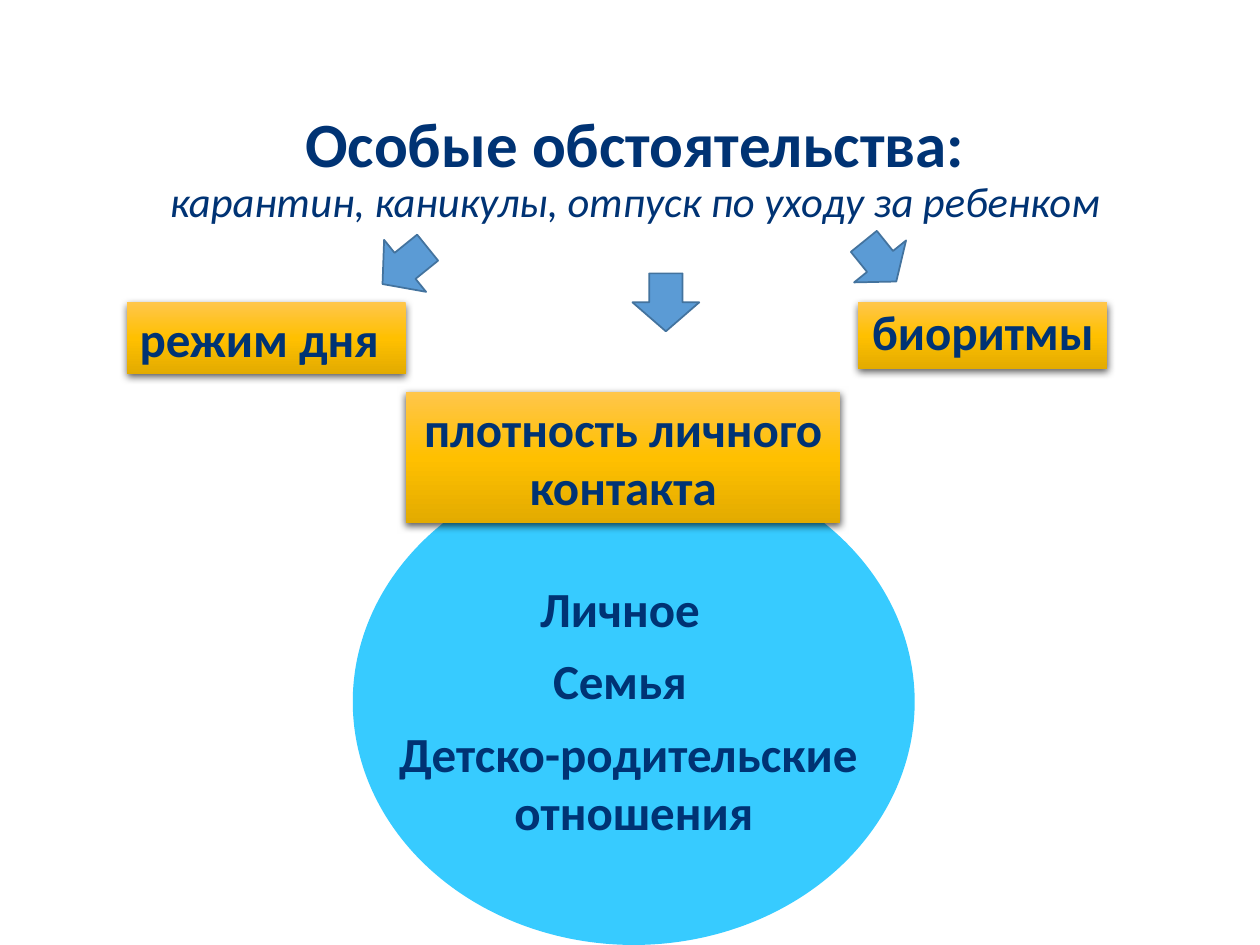
from dataclasses import dataclass
import copy

import lxml.etree
import pptx
import pptx.dml.color
import pptx.enum.shapes
import pptx.enum.text
import pptx.oxml.ns
import pptx.util

Inches = pptx.util.Inches
Pt = pptx.util.Pt
Shapes = pptx.enum.shapes.MSO_SHAPE
Align = pptx.enum.text.PP_ALIGN
Anchor = pptx.enum.text.MSO_ANCHOR
qn = pptx.oxml.ns.qn


@dataclass(frozen=True)
class Theme:
    font: str = "Calibri"
    ink: str = "003374"
    circle: str = "37CBFF"
    arrow: str = "5B9BD5"
    arrow_line: str = "43739E"
    gold: tuple = ((0, "FFC64B"), (0.5, "FFC000"), (1, "E3AB00"))
    shadow: str = "000000"
    title_size: float = 36
    subtitle_size: float = 24.3
    label_size: float = 28


@dataclass(frozen=True)
class Area:
    left: float
    top: float
    width: float
    height: float

    def lengths(self) -> tuple:
        return tuple(map(Inches, (self.left, self.top, self.width, self.height)))


@dataclass(frozen=True)
class Label:
    text: str
    area: Area
    align: Align = Align.CENTER
    spacing: float = 1.0


@dataclass(frozen=True)
class Arrow:
    area: Area
    rotation: float = 0


THEME = Theme()

FACTORS = (
    Label("плотность личного контакта", Area(3.22, 3.11, 3.45, 1.04)),
    Label("режим дня", Area(1.01, 2.4, 2.21, 0.57), Align.LEFT),
    Label("биоритмы", Area(6.81, 2.4, 1.98, 0.53), spacing=0.9),
)
CIRCLE_LABELS = (
    Label("Личное", Area(4.18, 4.54, 1.48, 0.57)),
    Label("Семья", Area(4.28, 5.11, 1.28, 0.57)),
    Label("Детско-родительские \nотношения", Area(3.05, 5.69, 3.96, 1.04)),
)
ARROWS = (
    Arrow(Area(5.02, 2.17, 0.53, 0.46)),
    Arrow(Area(6.72, 1.87, 0.53, 0.41), 321.1),
    Arrow(Area(2.95, 1.88, 0.53, 0.46), 51.1),
)


def color(value: str) -> pptx.dml.color.RGBColor:
    return pptx.dml.color.RGBColor.from_string(value)


def style_span(span, size: float, bold: bool = True, italic: bool = False) -> None:
    span.font.name = THEME.font
    span.font.size = Pt(size)
    span.font.bold = bold
    span.font.italic = italic
    span.font.color.rgb = color(THEME.ink)


def write_label(box, label: Label, wrap: bool) -> None:
    frame = box.text_frame
    frame.text = label.text
    frame.word_wrap = wrap
    frame.vertical_anchor = Anchor.TOP
    for para in frame.paragraphs:
        para.alignment = label.align
        para.line_spacing = label.spacing
        for span in para.runs:
            style_span(span, THEME.label_size)


def add_plain_shape(page, kind: Shapes, area: Area, fill: str):
    shape = page.shapes.add_shape(kind, *area.lengths())
    shape.shadow.inherit = False
    shape.fill.solid()
    shape.fill.fore_color.rgb = color(fill)
    shape.line.fill.background()
    return shape


def fill_gold(box) -> None:
    box.fill.gradient()
    box.fill.gradient_angle = 270
    # A new gradient has two stops; the gold one needs a third
    stop_list = box.element.spPr.find(".//" + qn("a:gsLst"))
    stop_list.append(copy.deepcopy(stop_list[0]))
    for stop, (position, value) in zip(box.fill.gradient_stops, THEME.gold):
        stop.position = position
        stop.color.rgb = color(value)


def add_drop_shadow(box) -> None:
    effects = box.element.spPr.find(qn("a:effectLst"))
    shadow = lxml.etree.SubElement(
        effects, qn("a:outerShdw"), blurRad=str(Pt(4.5)), dist=str(Pt(1.5)),
        dir="5400000", algn="ctr", rotWithShape="0")
    tone = lxml.etree.SubElement(shadow, qn("a:srgbClr"), val=THEME.shadow)
    lxml.etree.SubElement(tone, qn("a:alpha"), val="63000")


def add_factor(page, label: Label) -> None:
    box = add_plain_shape(page, Shapes.RECTANGLE, label.area, THEME.gold[1][1])
    fill_gold(box)
    add_drop_shadow(box)
    write_label(box, label, wrap=True)


def add_circle_label(page, label: Label) -> None:
    box = page.shapes.add_textbox(*label.area.lengths())
    write_label(box, label, wrap=False)


def add_arrow(page, arrow: Arrow) -> None:
    shape = add_plain_shape(page, Shapes.DOWN_ARROW, arrow.area, THEME.arrow)
    shape.line.color.rgb = color(THEME.arrow_line)
    shape.line.width = Pt(1)
    shape.rotation = arrow.rotation


def write_title(page) -> None:
    title = page.shapes.title
    title.left, title.top, title.width, title.height = Area(0.42, 0.96, 9.24, 1.15).lengths()
    frame = title.text_frame
    frame.text = "Особые обстоятельства:\vкарантин, каникулы, отпуск по уходу за ребенком"
    frame.word_wrap = True
    frame.auto_size = pptx.enum.text.MSO_AUTO_SIZE.NONE
    frame.vertical_anchor = Anchor.MIDDLE
    frame.margin_bottom = Inches(0.42)
    para = frame.paragraphs[0]
    para.alignment = Align.CENTER
    para.line_spacing = 0.9
    heading, subtitle = para.runs
    style_span(heading, THEME.title_size)
    style_span(subtitle, THEME.subtitle_size, bold=False, italic=True)


def main() -> None:
    deck = pptx.Presentation()
    deck.slide_width, deck.slide_height = Inches(10), Inches(7.5)
    page = deck.slides.add_slide(deck.slide_layouts[5])
    write_title(page)

    # Circle of relationships, partly behind the central factor
    add_plain_shape(page, Shapes.FLOWCHART_CONNECTOR, Area(2.8, 3.64, 4.46, 3.86), THEME.circle)
    for label in CIRCLE_LABELS:
        add_circle_label(page, label)

    # Gold factors and the arrows that lead to them
    for label in FACTORS:
        add_factor(page, label)
    for arrow in ARROWS:
        add_arrow(page, arrow)

    deck.save("out.pptx")


if __name__ == "__main__":
    main()
